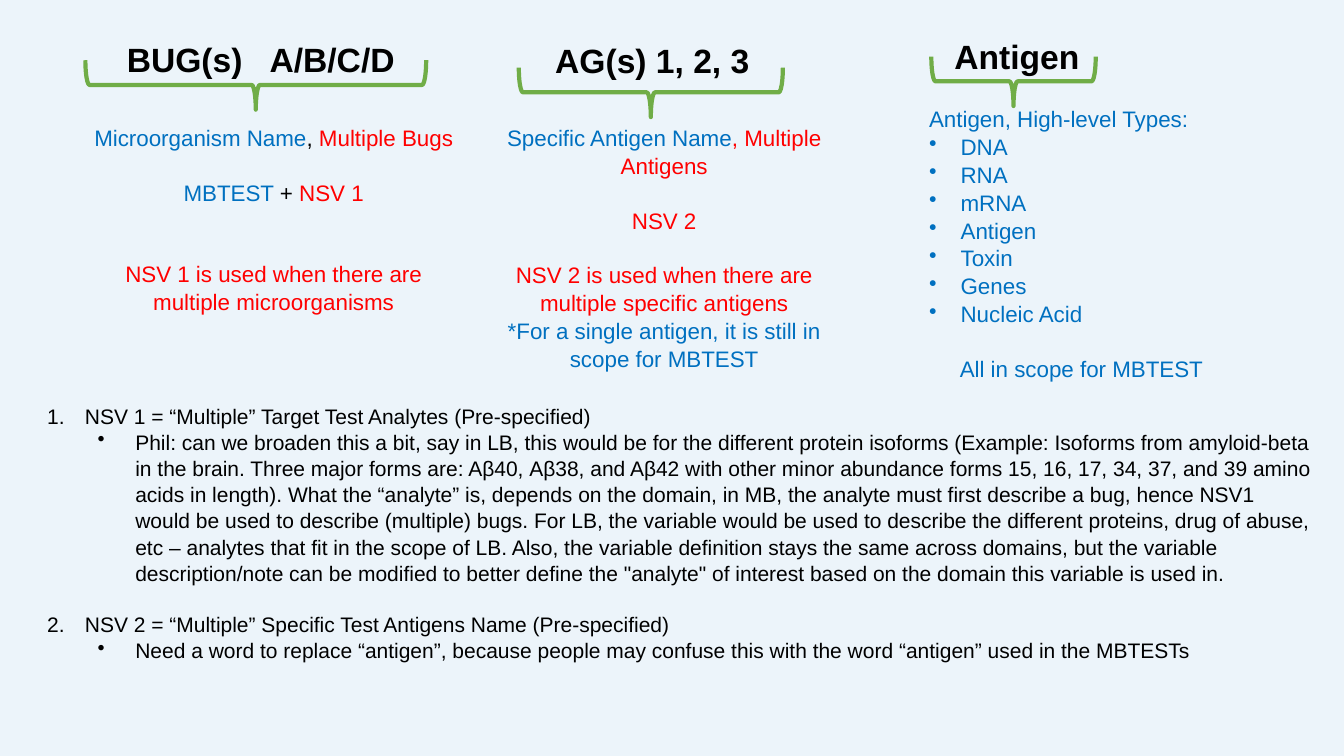
"""Builds the slide on naming bugs and antigens with the NSV variables."""
from lxml import etree
from pptx import Presentation
from pptx.dml.color import RGBColor
from pptx.enum import shapes, text
from pptx.oxml.ns import qn
from pptx.util import Pt

THEME = {
    "font": "Arial", "back": "ECF4FA", "brace": "70AD47",
    "black": "000000", "blue": "0070C0", "red": "FF0000",
    "head": 24, "body": 16, "note": 15, "line": 3, "lead": 1.04,
}
SLIDE = (960, 540)
DEPTH = 35.3
GAP = 19.2

HEADS = [
    ("BUG(s)\tA/B/C/D", (83.5, 24.5, 216, 36), 102),
    ("AG(s) 1, 2, 3", (389.5, 25.2, 170, 36), None),
    ("Antigen", (674.6, 22.3, 134, 36), None),
]
BRACES = [(61, 43, 243.4), (370.6, 48.3, 188.6), (665.3, 40.4, 117.4)]

BUGS = [
    ([("Microorganism Name", "blue"), (", ", "black"), ("Multiple Bugs", "red")], "mid", 0),
    ([("MBTEST ", "blue"), ("+ ", "black"), ("NSV 1", "red")], "mid", 1),
    ([("NSV 1 is used when there are multiple microorganisms", "red")], "mid", 2),
]
AGS = [
    ([("Specific Antigen Name", "blue"), (", Multiple Antigens", "red")], "mid", 0),
    ([("NSV 2", "red")], "mid", 1),
    ([("NSV 2 is used when there are multiple specific antigens", "red")], "mid", 1),
    ([("*For a single antigen, it is still in scope for MBTEST", "blue")], "mid", 0),
]
KINDS = ["DNA", "RNA", "mRNA", "Antigen", "Toxin", "Genes", "Nucleic Acid"]
TYPES = [
    ([("Antigen, High-level Types:", "blue")], "plain", 0),
    *[([(kind, "blue")], "dot", 0) for kind in KINDS],
    ([("All in scope for MBTEST", "blue")], "mid", 1),
]
NOTES = [
    ([("NSV 1 = “Multiple” Target Test Analytes (Pre-specified)", "black")], "num", 0),
    ([("Phil: can we broaden this a bit, say in LB, this would be for the different protein "
       "isoforms (Example: Isoforms from amyloid-beta in the brain. Three major forms are: "
       "Aβ40, Aβ38, and Aβ42 with other minor abundance forms 15, 16, 17, 34, 37, and 39 "
       "amino acids in length). What the “analyte” is, depends on the domain, in MB, the "
       "analyte must first describe a bug, hence NSV1 would be used to describe (multiple) "
       "bugs. For LB, the variable would be used to describe the different proteins, drug of "
       "abuse, etc – analytes that fit in the scope of LB. Also, the variable definition "
       "stays the same across domains, but the variable description/note can be modified to "
       "better define the \"analyte\" of interest based on the domain this variable is used "
       "in.", "black")], "sub", 0),
    ([("NSV 2 = “Multiple” Specific Test Antigens Name (Pre-specified)", "black")], "num", 0.94),
    ([("Need a word to replace “antigen”, because people may confuse this with the word "
       "“antigen” used in the MBTESTs", "black")], "sub", 0),
]
BODIES = [
    (BUGS, (56.2, 84.2, 278.6, 143.3), "body"),
    (AGS, (342.7, 84.2, 263.5, 181.4), "body"),
    (TYPES, (656.6, 70.6, 231.8, 200.9), "body"),
    (NOTES, (26.6, 283.7, 918.7, 207.4), "note"),
]
STYLES = {
    "plain": None, "mid": None,
    "dot": (0, 22.5, 22.5, "buChar", {"char": "•"}),
    "num": (0, 27, 27, "buAutoNum", {"type": "arabicPeriod"}),
    "sub": (1, 63, 27, "buChar", {"char": "•"}),
}


def tint(name):
    return RGBColor.from_string(THEME[name])


def add_box(slide, spot):
    box = slide.shapes.add_textbox(*map(Pt, spot))
    frame = box.text_frame
    frame.word_wrap = True
    frame.auto_size = text.MSO_AUTO_SIZE.SHAPE_TO_FIT_TEXT
    return frame


def set_font(para, size):
    para.font.name = THEME["font"]
    para.font.size = Pt(THEME[size])


def add_head(slide, words, spot, stop):
    para = add_box(slide, spot).paragraphs[0]
    para.add_run().text = words
    set_font(para, "head")
    para.font.bold = True
    para.font.color.rgb = tint("black")
    if stop:
        props = para._p.get_or_add_pPr()
        tabs = etree.Element(qn("a:tabLst"))
        etree.SubElement(tabs, qn("a:tab"), pos=str(Pt(stop)), algn="l")
        props.insert(0, tabs)


def add_brace(slide, left, top, width):
    x = left + (width - DEPTH) / 2
    y = top + (DEPTH - width) / 2
    brace = slide.shapes.add_shape(
        shapes.MSO_SHAPE.LEFT_BRACE, Pt(x), Pt(y), Pt(DEPTH), Pt(width))
    brace.rotation = 270
    brace.shadow.inherit = False
    brace.fill.background()
    brace.line.color.rgb = tint("brace")
    brace.line.width = Pt(THEME["line"])


def set_bullet(para, level, left, hang, tag, attrs):
    para.level = level
    props = para._p.get_or_add_pPr()
    props.set("marL", str(Pt(left)))
    props.set("indent", str(-Pt(hang)))
    mark = etree.Element(qn("a:" + tag), **attrs)
    props.find(qn("a:defRPr")).addprevious(mark)


def add_body(slide, rows, spot, size):
    frame = add_box(slide, spot)
    for i, (parts, style, skip) in enumerate(rows):
        para = frame.add_paragraph() if i else frame.paragraphs[0]
        set_font(para, size)
        para.line_spacing = THEME["lead"]
        para.space_before = Pt(skip * GAP)
        if style == "mid":
            para.alignment = text.PP_ALIGN.CENTER
        if STYLES[style]:
            set_bullet(para, *STYLES[style])
        if len(parts) == 1:
            para.font.color.rgb = tint(parts[0][1])
        for words, hue in parts:
            run = para.add_run()
            run.text = words
            if len(parts) > 1:
                run.font.color.rgb = tint(hue)


def main():
    deck = Presentation()
    deck.slide_width, deck.slide_height = map(Pt, SLIDE)
    slide = deck.slides.add_slide(deck.slide_layouts[6])
    slide.background.fill.solid()
    slide.background.fill.fore_color.rgb = tint("back")
    for head in HEADS:
        add_head(slide, *head)
    for brace in BRACES:
        add_brace(slide, *brace)
    for body in BODIES:
        add_body(slide, *body)
    deck.save("out.pptx")


if __name__ == "__main__":
    main()
